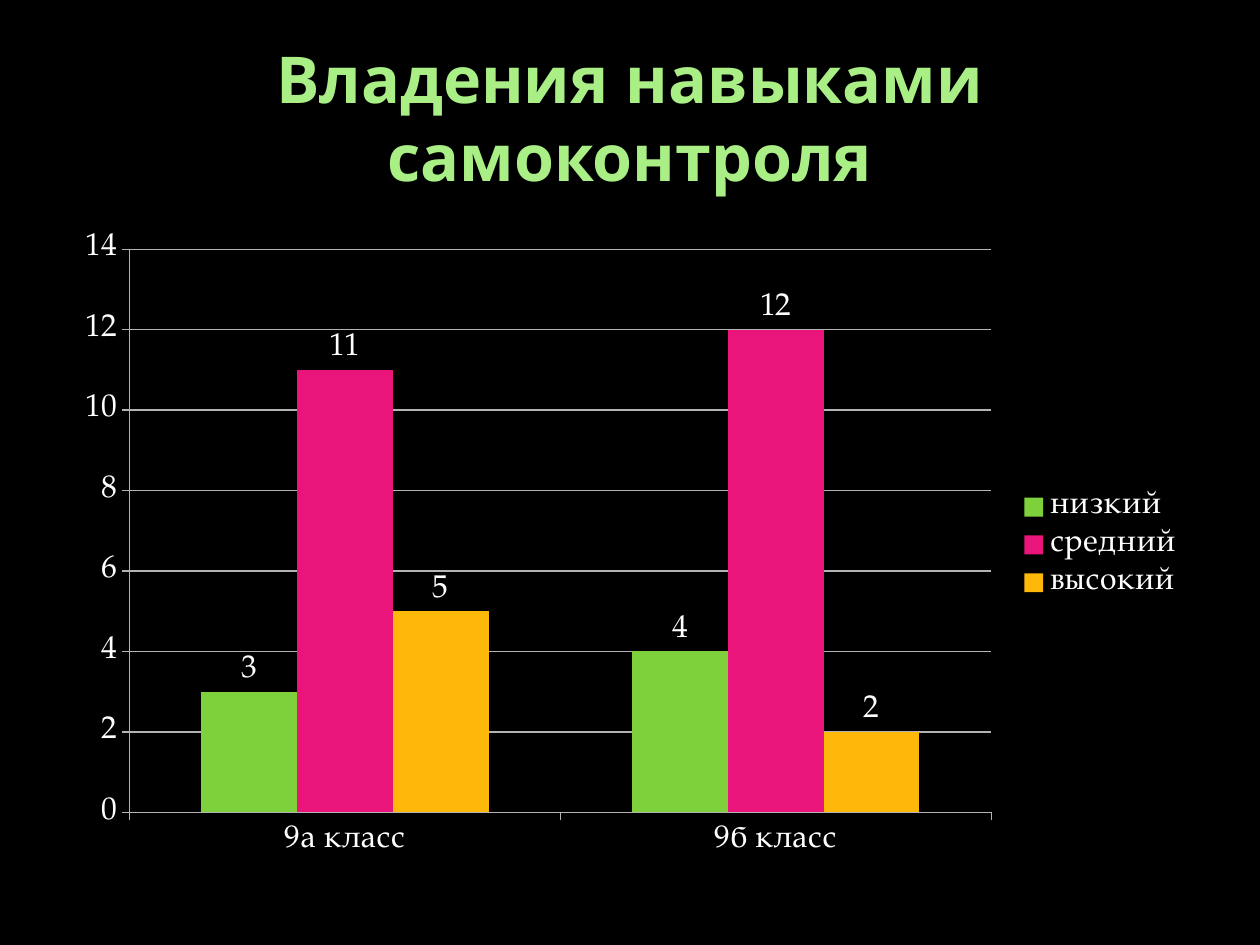
from dataclasses import dataclass

from pptx import Presentation
from pptx.chart.data import CategoryChartData
from pptx.dml.color import RGBColor
from pptx.enum.chart import XL_CHART_TYPE, XL_LABEL_POSITION, XL_LEGEND_POSITION, XL_TICK_MARK
from pptx.enum.text import MSO_ANCHOR, PP_ALIGN
from pptx.util import Inches, Pt

CLUSTERED = XL_CHART_TYPE.COLUMN_CLUSTERED
OUTSIDE_END = XL_LABEL_POSITION.OUTSIDE_END
LEGEND_RIGHT = XL_LEGEND_POSITION.RIGHT
TICK_OUT = XL_TICK_MARK.OUTSIDE
MIDDLE = MSO_ANCHOR.MIDDLE
CENTER = PP_ALIGN.CENTER


@dataclass(frozen=True)
class Theme:
    background: str = "000000"
    title: str = "A9EF86"
    text: str = "FFFFFF"
    line: str = "B3B3B3"
    low: str = "7FD13B"
    medium: str = "EA157A"
    high: str = "FEB80A"
    title_font: str = "Noto Sans"
    chart_font: str = "TeX Gyre Pagella"
    title_size: float = 36.9
    chart_size: float = 18


THEME = Theme()
CLASSES = ["9а класс", "9б класс"]
LEVELS = [
    ("низкий", [3, 4], THEME.low),
    ("средний", [11, 12], THEME.medium),
    ("высокий", [5, 2], THEME.high),
]


def rgb(color):
    return RGBColor.from_string(color)


def format_font(font, name, size, color, bold=False):
    font.name = name
    font.size = Pt(size)
    font.bold = bold
    font.color.rgb = rgb(color)


def write_text(tf, text, align=CENTER, anchor=MIDDLE, **font):
    tf.word_wrap = True
    tf.vertical_anchor = anchor
    p = tf.paragraphs[0]
    p.alignment = align
    r = p.add_run()
    r.text = text
    format_font(r.font, **font)


def place_title(slide, text, left, top, width, height):
    sp = slide.shapes.title
    sp.left, sp.top, sp.width, sp.height = left, top, width, height
    write_text(sp.text_frame, text, name=THEME.title_font,
               size=THEME.title_size, color=THEME.title, bold=True)


def format_line(line):
    line.color.rgb = rgb(THEME.line)
    line.width = Pt(0.75)


def place_chart(slide, left, top, width, height):
    data = CategoryChartData()
    data.categories = CLASSES
    for name, values, _ in LEVELS:
        data.add_series(name, values)
    chart = slide.shapes.add_chart(CLUSTERED, left, top, width, height, data).chart
    format_font(chart.font, THEME.chart_font, THEME.chart_size, THEME.text)
    chart.has_title = False
    chart.has_legend = True
    chart.legend.position = LEGEND_RIGHT
    chart.legend.include_in_layout = False

    for axis in (chart.category_axis, chart.value_axis):
        axis.major_tick_mark = TICK_OUT
        format_line(axis.format.line)
    value_axis = chart.value_axis
    value_axis.minimum_scale = 0
    value_axis.maximum_scale = 14
    value_axis.major_unit = 2
    value_axis.has_major_gridlines = True
    format_line(value_axis.major_gridlines.format.line)

    plot = chart.plots[0]
    plot.gap_width = 150
    plot.overlap = 0
    plot.vary_by_categories = False
    for series, (_, _, color) in zip(plot.series, LEVELS):
        series.format.fill.solid()
        series.format.fill.fore_color.rgb = rgb(color)
        labels = series.data_labels
        labels.show_value = True
        labels.position = OUTSIDE_END


def main():
    prs = Presentation()
    prs.slide_width, prs.slide_height = Inches(10), Inches(7.5)
    slide = prs.slides.add_slide(prs.slide_layouts[5])
    fill = slide.background.fill
    fill.solid()
    fill.fore_color.rgb = rgb(THEME.background)
    left, width = Inches(0.5), Inches(9)
    place_title(slide, "Владения навыками самоконтроля",
                left, Inches(0.3), width, Inches(1.25))
    place_chart(slide, left, Inches(1.75), width, Inches(5.15))
    prs.save("out.pptx")


if __name__ == "__main__":
    main()
